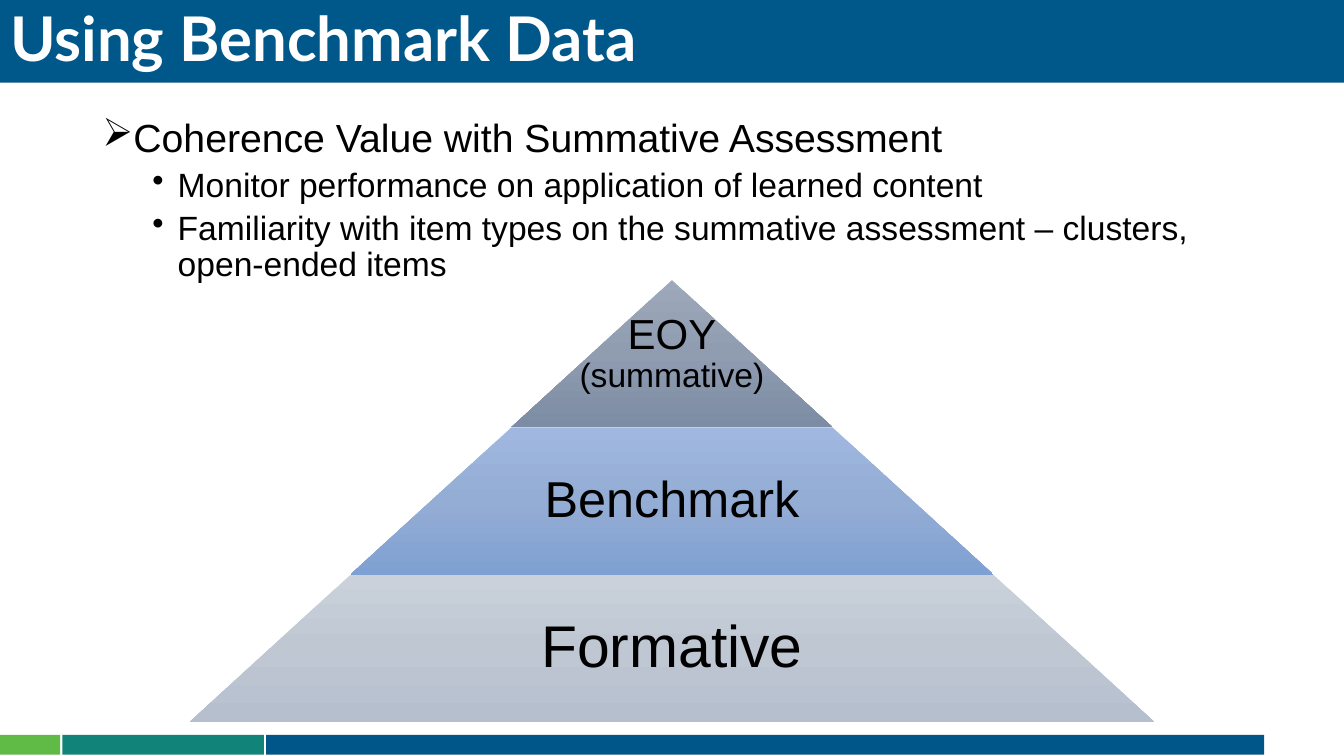
from dataclasses import dataclass

import pptx
import pptx.dml.color
import pptx.enum.shapes
import pptx.enum.text
import pptx.oxml.ns
import pptx.util
from copy import deepcopy
from lxml import etree

Cm = pptx.util.Cm
Pt = pptx.util.Pt
Align = pptx.enum.text.PP_ALIGN
Anchor = pptx.enum.text.MSO_ANCHOR
Shape = pptx.enum.shapes.MSO_SHAPE

WIDE, HIGH = 33.87, 19.05
PEAK, STEP, RISE = 7.06, 8.1, 3.71
SLOPE = 1.093


@dataclass
class Line:
    text: str
    size: float
    level: int = 0
    mark: str = ""
    left: float = 0
    space: float = 0


@dataclass
class Tier:
    lines: list[Line]
    stops: list[str]
    share: float
    inset: float


@dataclass
class Bar:
    left: float
    width: float
    fill: str


BARS = [Bar(0, 1.52, "60BB46"), Bar(1.57, 5.08, "128379"), Bar(6.71, 25.15, "005689")]
POINTS = [
    Line("Coherence Value with Summative Assessment", 28, 0, "➢", 0.64),
    Line("Monitor performance on application of learned content", 24, 1, "•", 1.9, 5),
    Line("Familiarity with item types on the summative assessment – clusters, "
         "open-ended items", 24, 1, "•", 1.9, 5),
]
TIERS = [
    Tier([Line("EOY", 30), Line("(summative)", 24)], ["9DA9BB", "909CB0", "7C8CA4"], 1, 0.1),
    Tier([Line("Benchmark", 36)], ["A0B8DF", "94ADD5", "7FA0D2"], 0.65, 0.13),
    Tier([Line("Formative", 42)], ["CAD1DB", "BFC7D3", "B6BFCE"], 0.65, 0.15),
]


def shade(code: str) -> pptx.dml.color.RGBColor:
    return pptx.dml.color.RGBColor.from_string(code)


def apply(thing, traits: dict) -> None:
    for name, value in traits.items():
        setattr(thing, name, value)


def write(frame, lines: list[Line], align, face: str = "Arial",
          ink: str = "000000", bold: bool = False) -> None:
    for i, line in enumerate(lines):
        para = frame.add_paragraph() if i else frame.paragraphs[0]
        if line.mark:
            props = para._p.get_or_add_pPr()
            props.set("marL", str(Cm(line.left)))
            props.set("indent", str(-Cm(0.64)))
            mark = etree.SubElement(props, pptx.oxml.ns.qn("a:buChar"))
            mark.set("char", line.mark)
        apply(para, {"alignment": align, "level": line.level,
                     "line_spacing": 0.9, "space_before": Pt(line.space)})
        run = para.add_run()
        run.text = line.text
        apply(run.font, {"name": face, "size": Pt(line.size), "bold": bold})
        run.font.color.rgb = shade(ink)


def add_shape(slide, kind, left: float, top: float, width: float, height: float):
    shape = slide.shapes.add_shape(kind, Cm(left), Cm(top), Cm(width), Cm(height))
    shape.shadow.inherit = False
    shape.line.fill.background()
    return shape


def add_text(slide, left: float, top: float, width: float, height: float):
    box = slide.shapes.add_textbox(Cm(left), Cm(top), Cm(width), Cm(height))
    box.text_frame.word_wrap = True
    return box.text_frame


def blend(shape, codes: list[str]) -> None:
    shape.fill.gradient()
    shape.fill.gradient_angle = 270
    stops = shape._element.spPr.find(".//" + pptx.oxml.ns.qn("a:gsLst"))
    stops.append(deepcopy(stops[-1]))
    for i, (stop, code) in enumerate(zip(shape.fill.gradient_stops, codes)):
        stop.position = i / 2
        stop.color.rgb = shade(code)


def add_bar(slide, bar: Bar) -> None:
    shape = add_shape(slide, Shape.RECTANGLE, bar.left, 18.52, bar.width, 0.5)
    shape.fill.solid()
    shape.fill.fore_color.rgb = shade(bar.fill)


def add_tier(slide, rank: int, tier: Tier) -> None:
    width = STEP * (rank + 1)
    top = PEAK + RISE * rank
    shape = add_shape(slide, Shape.TRAPEZOID, (WIDE - width) / 2, top, width, RISE)
    shape.adjustments[0] = SLOPE
    blend(shape, tier.stops)
    span = width * tier.share
    frame = add_text(slide, (WIDE - span) / 2, top, span, RISE)
    sides = ("left", "top", "right", "bottom")
    apply(frame, {"vertical_anchor": Anchor.MIDDLE}
          | {f"margin_{side}": Cm(tier.inset) for side in sides})
    write(frame, tier.lines, Align.CENTER)


def add_title(slide) -> None:
    title = slide.shapes.title
    apply(title, {"left": 0, "top": 0, "width": Cm(WIDE), "height": Cm(2.08)})
    title.fill.solid()
    title.fill.fore_color.rgb = shade("005789")
    apply(title.text_frame, {"vertical_anchor": Anchor.MIDDLE, "word_wrap": True,
                             "auto_size": pptx.enum.text.MSO_AUTO_SIZE.NONE})
    write(title.text_frame, [Line("Using Benchmark Data", 44)], Align.LEFT,
          "Lato", "FFFFFF", True)


def main() -> None:
    deck = pptx.Presentation()
    apply(deck, {"slide_width": Cm(WIDE), "slide_height": Cm(HIGH)})
    slide = deck.slides.add_slide(deck.slide_layouts[5])
    add_title(slide)
    for bar in BARS:
        add_bar(slide, bar)
    write(add_text(slide, 2.33, 2.87, 29.21, 14.05), POINTS, Align.LEFT)
    for rank, tier in enumerate(TIERS):
        add_tier(slide, rank, tier)
    deck.save("out.pptx")


if __name__ == "__main__":
    main()
